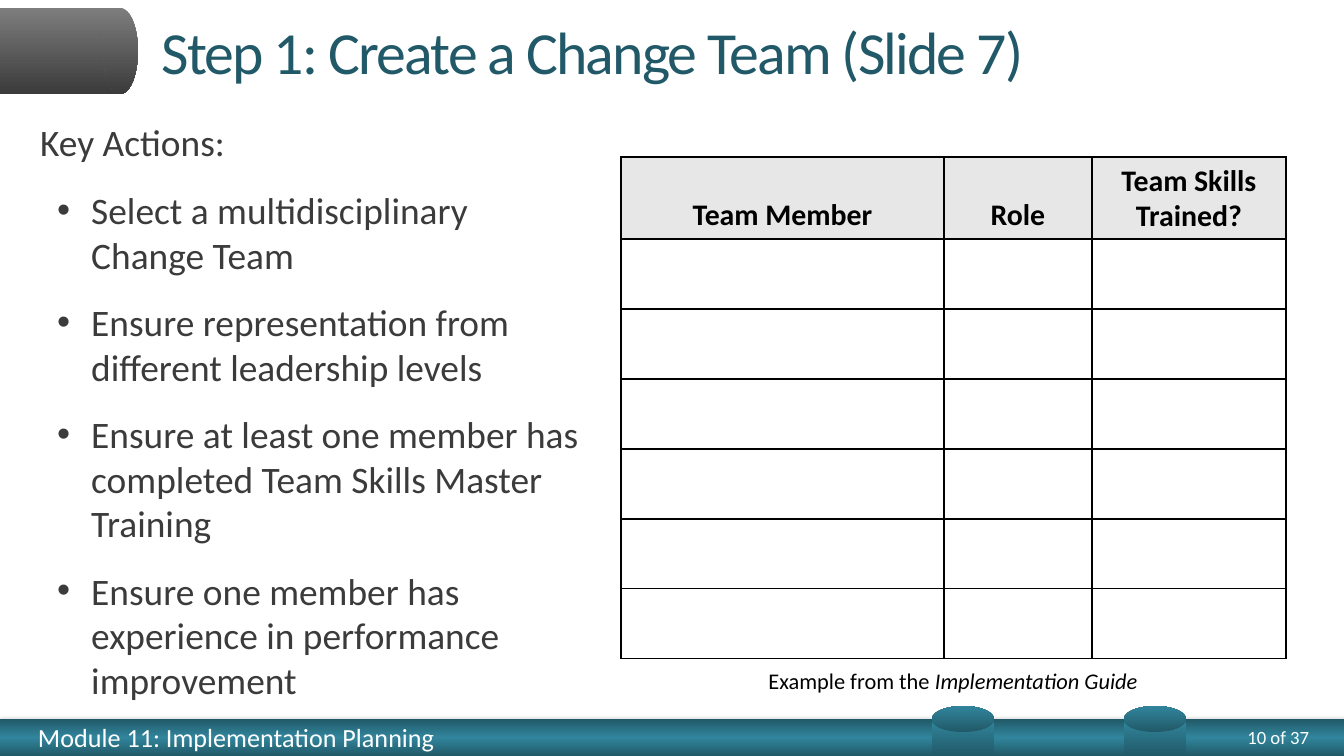
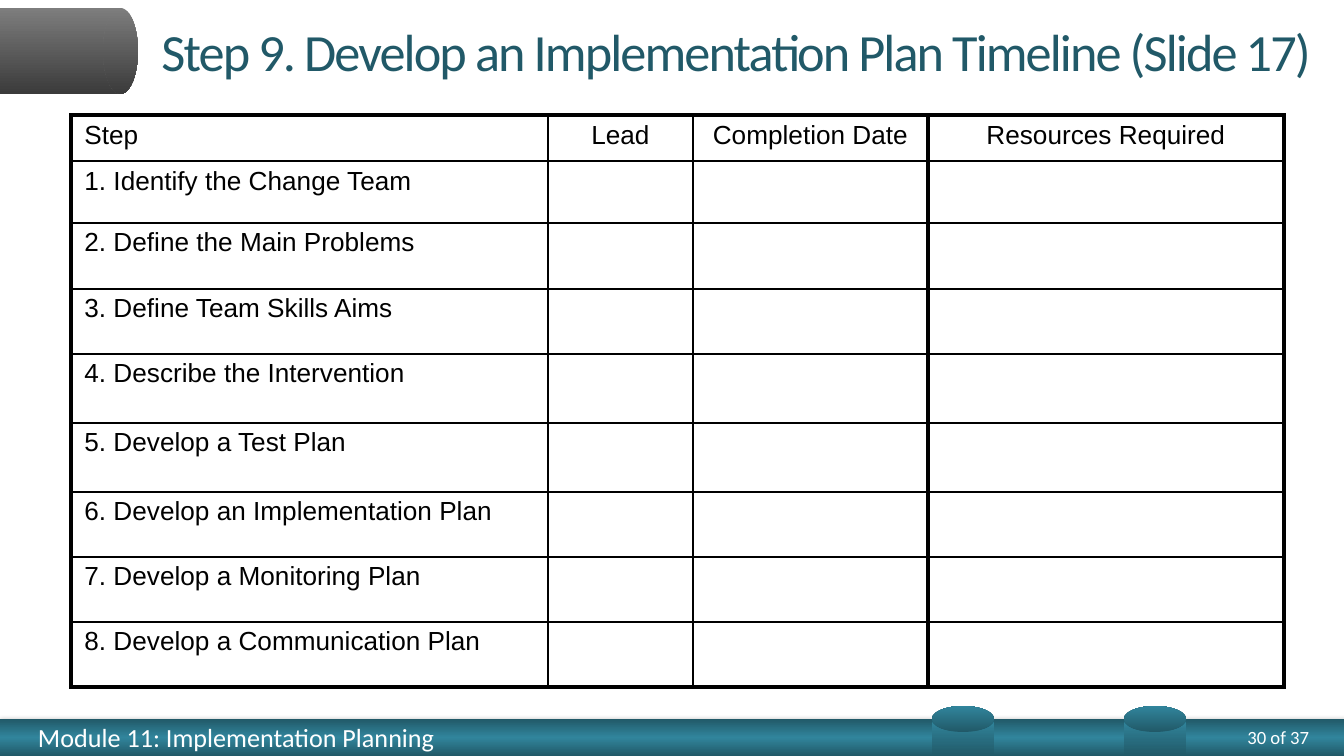
from copy import deepcopy

from lxml import etree
from pptx import Presentation
from pptx import util as u
from pptx.dml.color import RGBColor
from pptx.enum import shapes, text
from pptx.oxml import ns

PX = 914400 / 134.4
TEAL, LIGHT_TEAL = "215968", "31859C"
GREY, DARK_GREY = "7D7D7D", "3B3B3B"
BLACK, WHITE, HEADER_GREY = "000000", "FFFFFF", "E7E7E7"
RECT, OVAL = shapes.MSO_SHAPE.RECTANGLE, shapes.MSO_SHAPE.OVAL
LEFT, CENTER, RIGHT = text.PP_ALIGN.LEFT, text.PP_ALIGN.CENTER, text.PP_ALIGN.RIGHT
MIDDLE, BOTTOM = text.MSO_ANCHOR.MIDDLE, text.MSO_ANCHOR.BOTTOM
rgb = RGBColor.from_string


def add_gradient(slide, kind, at, colors, angle, rotation=0):
    """Add a borderless shape whose colours are spread evenly along a clockwise angle."""
    sp = slide.shapes.add_shape(kind, *[round(v * PX) for v in at])
    sp.rotation = rotation
    sp.shadow.inherit = False
    sp.line.fill.background()
    sp.fill.gradient()
    sp.fill.gradient_angle = -angle % 360
    stops = sp._element.spPr.find(".//" + ns.qn("a:gsLst"))
    while len(stops) < len(colors):
        stops.append(deepcopy(stops[0]))
    for i, stop in enumerate(sp.fill.gradient_stops):
        stop.position = i / (len(colors) - 1)
        stop.color.rgb = rgb(colors[i])
    return sp


def add_grid(slide, at, cols, rows, words, font, size, heavy_x=(), heavy_y=()):
    """Add a ruled table; heavy_x and heavy_y number the thick grid lines."""
    box = [at[0], at[1], sum(cols), sum(rows)]
    frame = slide.shapes.add_table(len(rows), len(cols), *[round(v * PX) for v in box])
    tbl = frame.table
    tbl.first_row = tbl.horz_banding = False
    for c, width in enumerate(cols):
        tbl.columns[c].width = round(width * PX)
    for r, height in enumerate(rows):
        tbl.rows[r].height = round(height * PX)
        for c in range(len(cols)):
            cell = tbl.cell(r, c)
            tc_pr = cell._tc.get_or_add_tcPr()
            edges = {"lnL": c in heavy_x, "lnR": c + 1 in heavy_x,
                     "lnT": r in heavy_y, "lnB": r + 1 in heavy_y}
            for tag, heavy in edges.items():
                ln = etree.SubElement(tc_pr, ns.qn("a:" + tag))
                ln.set("w", str(u.Pt(2.25 if heavy else 1)))
                fill = etree.SubElement(ln, ns.qn("a:solidFill"))
                etree.SubElement(fill, ns.qn("a:srgbClr")).set("val", BLACK)
            cell.fill.background()
            if (r, c) in words:
                cell.text_frame.text = words[r, c]
                p = cell.text_frame.paragraphs[0]
                p.line_spacing = 0.95
                p.alignment = CENTER if r == 0 else LEFT
                p.font.name, p.font.size = font, u.Pt(size)
                p.font.color.rgb = rgb(BLACK)
    return tbl


prs = Presentation()
prs.slide_width, prs.slide_height = round(1344 * PX), round(756 * PX)
layout = prs.slide_layouts[5]
for ph in list(layout.placeholders):
    if ph.placeholder_format.type != shapes.PP_PLACEHOLDER.TITLE:
        ph._element.getparent().remove(ph._element)
team, timeline = [prs.slides.add_slide(layout) for _ in range(2)]

# Shared decoration, built once and moved to the layout
band = add_gradient(team, RECT, (0, 719, 1344, 37), [TEAL, LIGHT_TEAL, TEAL], 270)
effects = band._element.spPr.find(ns.qn("a:effectLst"))
shadow = etree.SubElement(effects, ns.qn("a:outerShdw"), blurRad=str(u.Pt(3.1)),
                          dist=str(u.Pt(1)), dir="5400000", rotWithShape="0")
shade = etree.SubElement(shadow, ns.qn("a:srgbClr"), val=BLACK)
etree.SubElement(shade, ns.qn("a:alpha"), val="35000")
decoration = [band]
for kind, at in [(RECT, (0, 8, 121, 86)), (OVAL, (103, 8, 35, 86))]:
    decoration.append(add_gradient(team, kind, at, [GREY, DARK_GREY], 90))
for x in (945, 1137):
    for kind, at in [(RECT, (x, 707, 36, 62)), (OVAL, (x + 5, 688, 26, 62))]:
        decoration.append(add_gradient(team, kind, at, [TEAL, LIGHT_TEAL], 0, 270))
for i, sp in enumerate(decoration):
    layout.shapes._spTree.insert(2 + i, sp._element)

# Titles and footers
for s, title, size, page in [
    (team, "Step 1: Create a Change Team (Slide 7)", 32, 10),
    (timeline, "Step 9. Develop an Implementation Plan Timeline (Slide 17)", 28, 30),
]:
    sp = s.shapes.title
    sp.left, sp.top, sp.width, sp.height = [round(v * PX) for v in (148, 0, 1179, 101)]
    tf = sp.text_frame
    tf.text = title
    tf.vertical_anchor = MIDDLE
    p = tf.paragraphs[0]
    p.alignment = LEFT
    r = p.runs[0]
    r.font.name, r.font.size = "Calibri", u.Pt(size)
    r.font.color.rgb = rgb(TEAL)
    r._r.get_or_add_rPr().set("spc", "-100")

    for label, x, width, size, align in [
        ("Module 11: Implementation Planning", 38, 720, 14, LEFT),
        (f"{page} of 37", 1200, 109, 10, RIGHT),
    ]:
        tf = s.shapes.add_textbox(*[round(v * PX) for v in (x, 719, width, 37)]).text_frame
        tf.margin_left = tf.margin_right = tf.margin_top = tf.margin_bottom = 0
        tf.word_wrap = True
        tf.vertical_anchor = MIDDLE
        tf.text = label
        p = tf.paragraphs[0]
        p.alignment = align
        p.font.name, p.font.size = "Calibri", u.Pt(size)
        p.font.color.rgb = rgb(WHITE)

# Change team: key actions, roster and caption
actions = [
    "Key Actions:",
    "Select a multidisciplinary Change Team",
    "Ensure representation from different leadership levels",
    "Ensure at least one member has completed Team Skills Master Training",
    "Ensure one member has experience in performance improvement",
]
tf = team.shapes.add_textbox(*[round(v * PX) for v in (27, 113, 575, 591)]).text_frame
tf.word_wrap = True
tf.text = "\n".join(actions)
for i, p in enumerate(tf.paragraphs):
    p.space_after = u.Pt(12)
    if i:
        p_pr = p._p.get_or_add_pPr()
        p_pr.set("marL", str(round(51 * PX)))
        p_pr.set("indent", str(round(-34 * PX)))
        etree.SubElement(p_pr, ns.qn("a:buFont"), typeface="Arial")
        etree.SubElement(p_pr, ns.qn("a:buChar"), char="•")
    p.font.name, p.font.size = "Calibri", u.Pt(20)
    p.font.color.rgb = rgb(DARK_GREY)

headings = ["Team Member", "Role", "Team Skills Trained?"]
roster = add_grid(team, (621, 157), [323, 148, 194], [82] + [70] * 6,
                  {(0, c): h for c, h in enumerate(headings)}, "Calibri", 16)
for cell in roster.iter_cells():
    cell.fill.solid()
    cell.fill.fore_color.rgb = rgb(WHITE)
for cell in roster.rows[0].cells:
    cell.fill.fore_color.rgb = rgb(HEADER_GREY)
    cell.vertical_anchor = BOTTOM
    cell.text_frame.paragraphs[0].font.bold = True

tf = team.shapes.add_textbox(*[round(v * PX) for v in (621, 661, 664, 41)]).text_frame
tf.word_wrap = True
p = tf.paragraphs[0]
p.alignment = CENTER
for words, italic in [("Example from the ", False), ("Implementation Guide", True)]:
    r = p.add_run()
    r.text = words
    r.font.name, r.font.size, r.font.italic = "Calibri", u.Pt(12), italic
    r.font.color.rgb = rgb(BLACK)

# Timeline: one row per step
headings = ["Step", "Lead", "Completion Date", "Resources Required"]
steps = [
    "Identify the Change Team",
    "Define the Main Problems",
    "Define Team Skills Aims",
    "Describe the Intervention",
    "Develop a Test Plan",
    "Develop an Implementation Plan",
    "Develop a Monitoring Plan",
    "Develop a Communication Plan",
]
words = {(0, c): h for c, h in enumerate(headings)}
words.update({(n, 0): f"{n}. {step}" for n, step in enumerate(steps, 1)})
plan = add_grid(timeline, (71, 115), [477, 145, 235, 356],
                [46, 62, 66, 65, 69, 69, 65, 65, 65], words, "Arial", 14,
                heavy_x=(0, 3, 4), heavy_y=(0, 9))
plan.cell(0, 0).text_frame.paragraphs[0].alignment = LEFT

prs.save("out.pptx")
